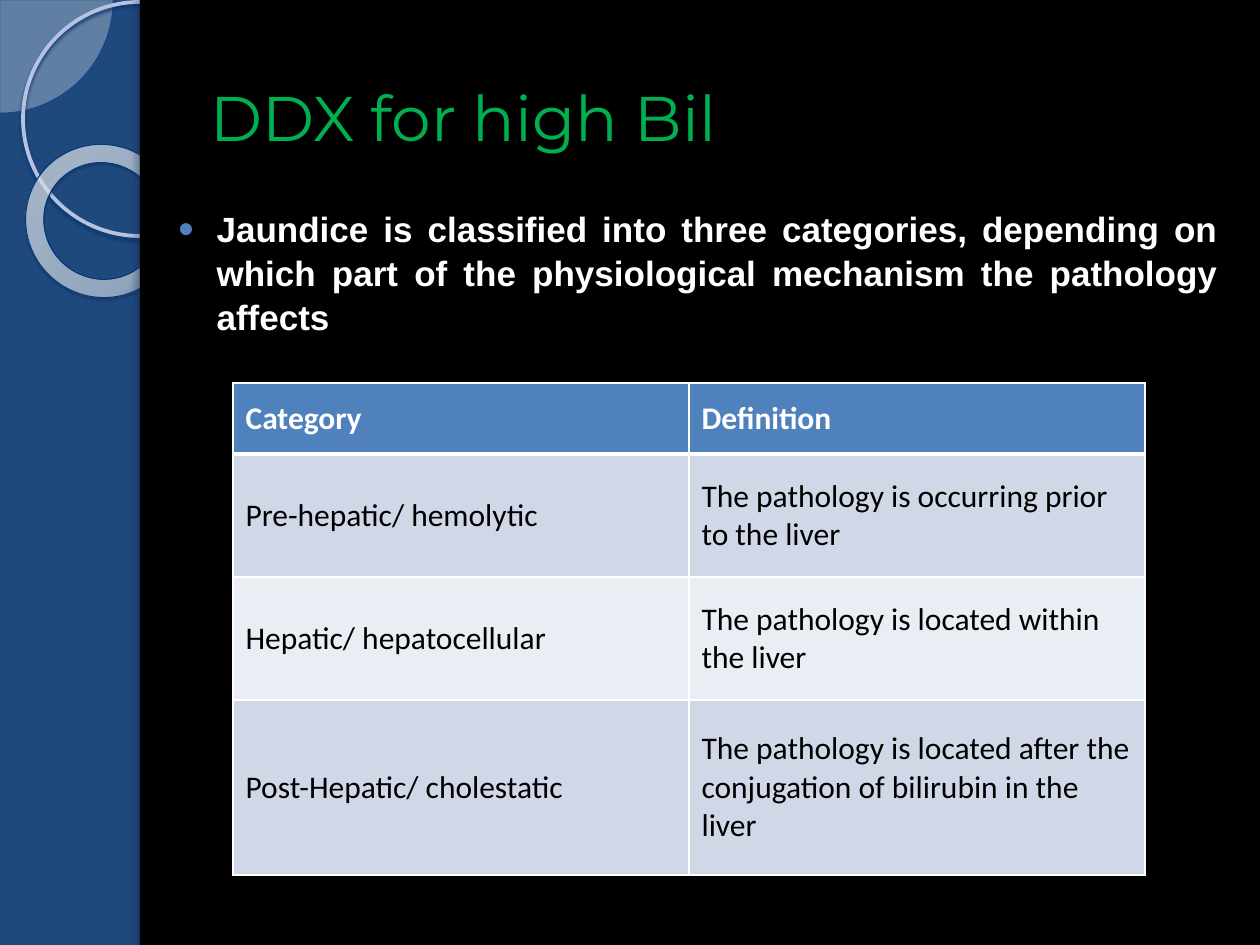
import pptx
import pptx.util
import pptx.dml.color
import pptx.enum.shapes
import pptx.enum.text
import pptx.oxml
import pptx.oxml.ns

RGBColor = pptx.dml.color.RGBColor
Shapes = pptx.enum.shapes.MSO_SHAPE
Align = pptx.enum.text.PP_ALIGN
Anchor = pptx.enum.text.MSO_ANCHOR
Pt = pptx.util.Pt

EMU_PER_PX = 914400 / 126
NAVY = RGBColor(0x1F, 0x49, 0x7D)
BLACK = RGBColor(0, 0, 0)
WHITE = RGBColor(0xFF, 0xFF, 0xFF)
GREEN = RGBColor(0, 0xB0, 0x50)
BLUE = RGBColor(0x4F, 0x81, 0xBD)
BAND_DARK = RGBColor(0xD0, 0xD8, 0xE8)
BAND_LIGHT = RGBColor(0xE9, 0xED, 0xF4)
PALE = RGBColor(0xE8, 0xEA, 0xF1)
PIE_LINE = RGBColor(0, 0x3C, 0x86)
RING_LINE = RGBColor(0xB7, 0xC2, 0xE0)
DONUT_LINE = RGBColor(0, 0x38, 0x7D)
RING_SHADOW = RGBColor(0x06, 0x34, 0x6E)
DONUT_SHADOW = RGBColor(0, 0x1A, 0x39)
STRIP_SHADOW = RGBColor(0x0D, 0x24, 0x40)
DONUT_STOPS = [
    (0, RGBColor(0xF0, 0xF2, 0xF8), 70),
    (70, RGBColor(0xF6, 0xF8, 0xFB), 55),
    (100, RGBColor(0, 0x3E, 0x8A), 60),
]

TITLE = "DDX for high Bil"
BODY = ("Jaundice is classified into three categories, depending on which part "
        "of the physiological mechanism the pathology affects")
ROWS = [
    ("Category", "Definition"),
    ("Pre-hepatic/ hemolytic", "The pathology is occurring prior to the liver"),
    ("Hepatic/ hepatocellular", "The pathology is located within the liver"),
    ("Post-Hepatic/ cholestatic",
     "The pathology is located after the conjugation of bilirubin in the liver"),
]
ROW_HEIGHTS = [71, 123, 123, 175]


def px(length):
    return round(length * EMU_PER_PX)


def apply_format(target, values):
    for name, value in values.items():
        setattr(target, name, value)


def place(shape, box):
    apply_format(shape, dict(zip(("left", "top", "width", "height"), map(px, box))))


def xml(text):
    namespaces = pptx.oxml.ns.nsdecls("a")
    return pptx.oxml.parse_xml(text.replace(">", f" {namespaces}>", 1))


def format_text(paragraph, text, color, values):
    run = paragraph.add_run()
    run.text = text
    apply_format(run.font, values)
    run.font.color.rgb = color


def add_shape(slide, kind, box, fill=None, line=None, weight=1, shadow=None):
    shape = slide.shapes.add_shape(kind, *map(px, box))
    shape.shadow.inherit = False
    if fill is None:
        shape.fill.background()
    else:
        shape.fill.solid()
        shape.fill.fore_color.rgb = fill
    if line is None:
        shape.line.fill.background()
    else:
        shape.line.color.rgb = line
        shape.line.width = Pt(weight)
    if shadow:
        color, alpha, blur, distance, angle = shadow
        effects = shape._element.spPr.find(pptx.oxml.ns.qn("a:effectLst"))
        effects.append(xml(
            f'<a:outerShdw blurRad="{Pt(blur)}" dist="{Pt(distance)}" '
            f'dir="{angle * 60000}" algn="tl" rotWithShape="0">'
            f'<a:srgbClr val="{color}"><a:alpha val="{alpha * 1000}"/></a:srgbClr>'
            '</a:outerShdw>'))
    return shape


def set_gradient(shape, stops):
    stop_xml = "".join(
        f'<a:gs pos="{position * 1000}"><a:srgbClr val="{color}">'
        f'<a:alpha val="{alpha * 1000}"/></a:srgbClr></a:gs>'
        for position, color, alpha in stops)
    properties = shape._element.spPr
    properties.replace(properties.find(pptx.oxml.ns.qn("a:noFill")), xml(
        f'<a:gradFill rotWithShape="1"><a:gsLst>{stop_xml}</a:gsLst>'
        '<a:path path="circle"><a:fillToRect l="-408000" t="-50000" '
        'r="508000" b="150000"/></a:path></a:gradFill>'))


def add_backdrop(slide, box):
    left, top, width, height = box
    pie = add_shape(slide, Shapes.PIE, (left - 113, top - 113, 226, 226),
                    PALE, PIE_LINE, 0.25)
    pie.adjustments[0] = 0
    pie.adjustments[1] = 54
    pie.fill._xPr.find(".//" + pptx.oxml.ns.qn("a:srgbClr")).append(
        xml('<a:alpha val="33000"/>'.replace("/>", "></a:alpha>")))
    add_shape(slide, Shapes.OVAL, (left + 23, top + 2, 234, 234),
              line=RING_LINE, weight=2.15, shadow=(RING_SHADOW, 85, 2, 2, 90))
    donut = add_shape(slide, Shapes.DONUT, (left + 25, top + 145, 155, 152),
                      line=DONUT_LINE, weight=0.58,
                      shadow=(DONUT_SHADOW, 35, 1, 1.2, 75))
    donut.adjustments[0] = 0.12
    donut.rotation = 38.6
    set_gradient(donut, DONUT_STOPS)
    add_shape(slide, Shapes.RECTANGLE, (left + 140, top, width - 140, height), BLACK)
    add_shape(slide, Shapes.RECTANGLE, (left + 140, top, 10, height), BLACK,
              shadow=(STRIP_SHADOW, 25, 3, 3, 180))


def fill_placeholder(slide, placeholder, box, anchor, text, color, values):
    place(placeholder, box)
    slide.shapes._spTree.append(placeholder._element)
    frame = placeholder.text_frame
    apply_format(frame, {"word_wrap": True, "vertical_anchor": anchor,
                         "auto_size": pptx.enum.text.MSO_AUTO_SIZE.NONE})
    format_text(frame.paragraphs[0], text, color, values)
    return frame.paragraphs[0]


def add_title(slide, box):
    paragraph = fill_placeholder(slide, slide.shapes.title, box, Anchor.MIDDLE, TITLE,
                                 GREEN, {"name": "Montserrat", "size": Pt(36)})
    paragraph.alignment = Align.LEFT


def add_body(slide, box):
    paragraph = fill_placeholder(slide, slide.placeholders[1], box, Anchor.TOP, BODY, WHITE,
                                 {"name": "Arial", "size": Pt(20), "bold": True})
    apply_format(paragraph, {"alignment": Align.JUSTIFY, "space_before": Pt(6),
                             "line_spacing": 1.05})
    properties = paragraph._p.get_or_add_pPr()
    properties.set("marL", str(px(50)))
    properties.set("indent", str(px(-39)))
    for bullet in (f'<a:buClr><a:srgbClr val="{BLUE}"/></a:buClr>',
                   '<a:buSzPct val="80000"></a:buSzPct>',
                   '<a:buFont typeface="Arial"></a:buFont>',
                   '<a:buChar char="●"></a:buChar>'):
        properties.append(xml(bullet))


def set_borders(cell, bottom_weight):
    properties = cell._tc.get_or_add_tcPr()
    weights = {"lnL": 1, "lnR": 1, "lnT": 1, "lnB": bottom_weight}
    for index, (side, weight) in enumerate(weights.items()):
        properties.insert(index, xml(
            f'<a:{side} w="{Pt(weight)}"><a:solidFill><a:srgbClr val="{WHITE}"/>'
            f'</a:solidFill></a:{side}>'))


def add_category_table(slide, box):
    left, top, width, height = map(px, box)
    table = slide.shapes.add_table(len(ROWS), 2, left, top, width, height).table
    for row_index, (texts, row_height) in enumerate(zip(ROWS, ROW_HEIGHTS)):
        header = row_index == 0
        fill = BLUE if header else (BAND_LIGHT, BAND_DARK)[row_index % 2]
        table.rows[row_index].height = px(row_height)
        for column_index, text in enumerate(texts):
            cell = table.cell(row_index, column_index)
            cell.vertical_anchor = Anchor.MIDDLE
            cell.fill.solid()
            cell.fill.fore_color.rgb = fill
            set_borders(cell, 3 if header else 1)
            paragraph = cell.text_frame.paragraphs[0]
            paragraph.alignment = Align.LEFT
            format_text(paragraph, text, WHITE if header else BLACK,
                        {"name": "Calibri", "size": Pt(18), "bold": header})


def main():
    presentation = pptx.Presentation()
    apply_format(presentation, {"slide_width": px(1260), "slide_height": px(945)})
    slide = presentation.slides.add_slide(presentation.slide_layouts[1])
    slide.background.fill.solid()
    slide.background.fill.fore_color.rgb = NAVY
    add_backdrop(slide, (0, 0, 1260, 945))
    add_title(slide, (198, 38, 1033, 157))
    add_body(slide, (154, 199, 1077, 661))
    add_category_table(slide, (233, 383, 912, sum(ROW_HEIGHTS)))
    presentation.save("out.pptx")


if __name__ == "__main__":
    main()
